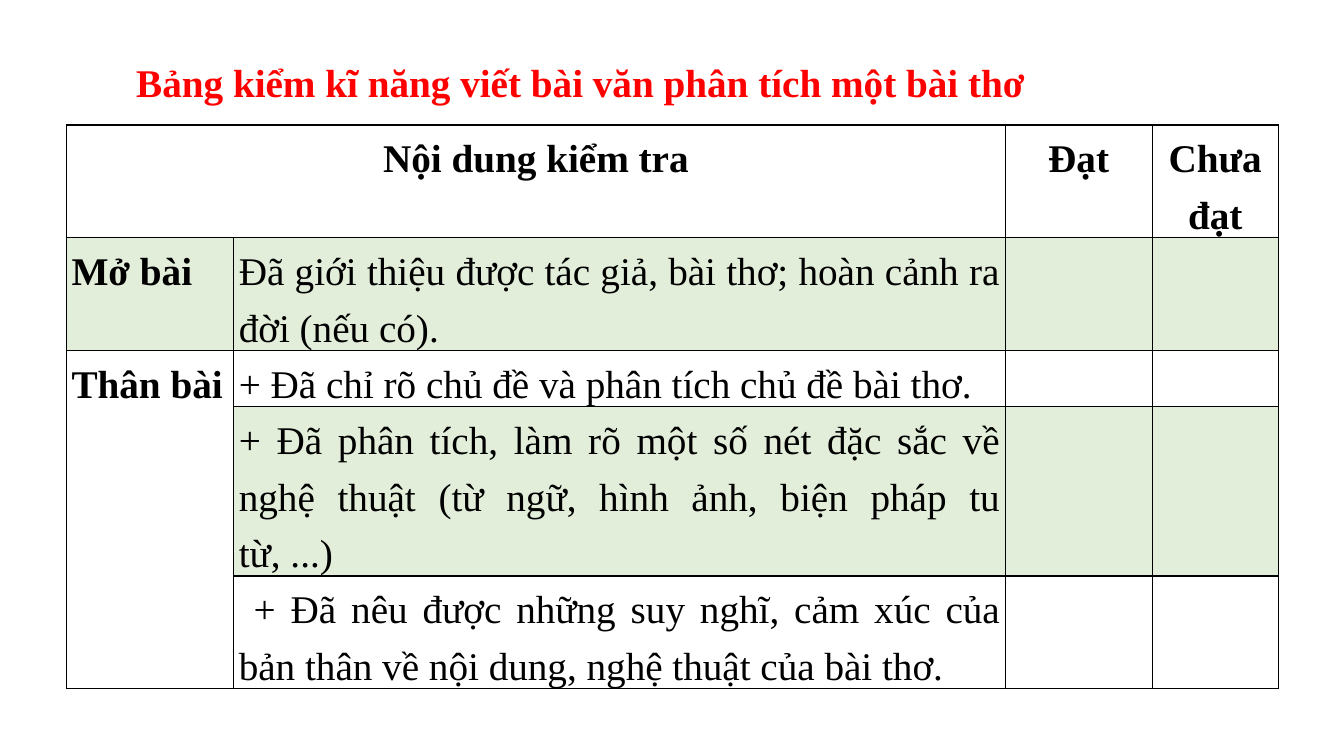
from dataclasses import dataclass

import pptx
import pptx.dml.color
import pptx.enum.text
import pptx.oxml
import pptx.oxml.ns
import pptx.util

Pt = pptx.util.Pt
RGB = pptx.dml.color.RGBColor
Align = pptx.enum.text.PP_ALIGN

RED = RGB(0xFF, 0x00, 0x00)
BLACK = RGB(0x00, 0x00, 0x00)
GREEN = RGB(0x70, 0xAD, 0x47)
FONT = "Times New Roman"
LINE = 40.2  # height of one text line
WIDTHS = (119.5, 551, 105, 90)
LINES = (2, 2, 1, 2, 2)  # text lines in each row
SHADED = (1, 3)


@dataclass
class Entry:
    row: int
    col: int
    text: str
    bold: bool
    align: Align


ENTRIES = [
    Entry(0, 0, "Nội dung kiểm tra", True, Align.CENTER),
    Entry(0, 2, "Đạt", True, Align.CENTER),
    Entry(0, 3, "Chưa đạt", True, Align.CENTER),
    Entry(1, 0, "Mở bài", True, Align.LEFT),
    Entry(1, 1, "Đã giới thiệu được tác giả, bài thơ; hoàn cảnh ra đời (nếu có).",
          False, Align.JUSTIFY),
    Entry(2, 0, "Thân bài", True, Align.LEFT),
    Entry(2, 1, "+ Đã chỉ rõ chủ đề và phân tích chủ đề bài thơ.",
          False, Align.JUSTIFY),
    Entry(3, 1, "+ Đã phân tích, làm rõ một số nét đặc sắc về nghệ thuật "
          "(từ ngữ, hình ảnh, biện pháp tu từ, ...)", False, Align.JUSTIFY),
    Entry(4, 1, " + Đã nêu được những suy nghĩ, cảm xúc của bản thân về "
          "nội dung, nghệ thuật của bài thơ.", False, Align.JUSTIFY),
]


def write(frame, text: str, color: RGB, bold: bool, align: Align) -> None:
    par = frame.paragraphs[0]
    par.alignment = align
    par.line_spacing = 1.3
    run = par.add_run()
    run.text = text
    run.font.name = FONT
    run.font.size = Pt(28)
    run.font.bold = bold
    run.font.color.rgb = color


def style(cell, shaded: bool) -> None:
    cell.margin_left = cell.margin_right = Pt(3.6)
    cell.margin_top = cell.margin_bottom = 0
    props = cell._tc.get_or_add_tcPr()
    if shaded:
        cell.fill.solid()
        cell.fill.fore_color.rgb = GREEN
        tint = props.find(".//" + pptx.oxml.ns.qn("a:srgbClr"))
        alpha = pptx.oxml.parse_xml(
            f'<a:alpha {pptx.oxml.ns.nsdecls("a")} val="20000"/>')
        tint.append(alpha)
    else:
        cell.fill.background()
    # Borders come before the fill
    for pos, side in enumerate("LRTB"):
        edge = pptx.oxml.parse_xml(
            f'<a:ln{side} {pptx.oxml.ns.nsdecls("a")} w="{Pt(1)}">'
            f'<a:solidFill><a:srgbClr val="{BLACK}"/></a:solidFill>'
            f'</a:ln{side}>')
        props.insert(pos, edge)


def main() -> None:
    deck = pptx.Presentation()
    deck.slide_width, deck.slide_height = Pt(960), Pt(540)
    slide = deck.slides.add_slide(deck.slide_layouts[5])

    # Title
    title = slide.shapes.title
    title.left, title.top = Pt(86.4), Pt(28.1)
    title.width, title.height = Pt(656.4), Pt(47.5)
    frame = title.text_frame
    frame.word_wrap = False
    frame.auto_size = pptx.enum.text.MSO_AUTO_SIZE.NONE
    frame.vertical_anchor = pptx.enum.text.MSO_ANCHOR.TOP
    write(frame, "Bảng kiểm kĩ năng viết bài văn phân tích một bài thơ",
          RED, True, Align.CENTER)

    # Checklist table
    table = slide.shapes.add_table(
        len(LINES), len(WIDTHS), Pt(47.5), Pt(89.3),
        Pt(sum(WIDTHS)), Pt(LINE * sum(LINES))).table
    table.first_row = table.horz_banding = False
    for col, width in zip(table.columns, WIDTHS):
        col.width = Pt(width)
    for num, (row, count) in enumerate(zip(table.rows, LINES)):
        row.height = Pt(LINE * count)
        for col, cell in enumerate(row.cells):
            style(cell, num in SHADED and (num, col) != (3, 0))
    table.cell(0, 0).merge(table.cell(0, 1))
    table.cell(2, 0).merge(table.cell(4, 0))

    # Cell text
    for item in ENTRIES:
        cell = table.cell(item.row, item.col)
        write(cell.text_frame, item.text, BLACK, item.bold, item.align)

    deck.save("out.pptx")


if __name__ == "__main__":
    main()
